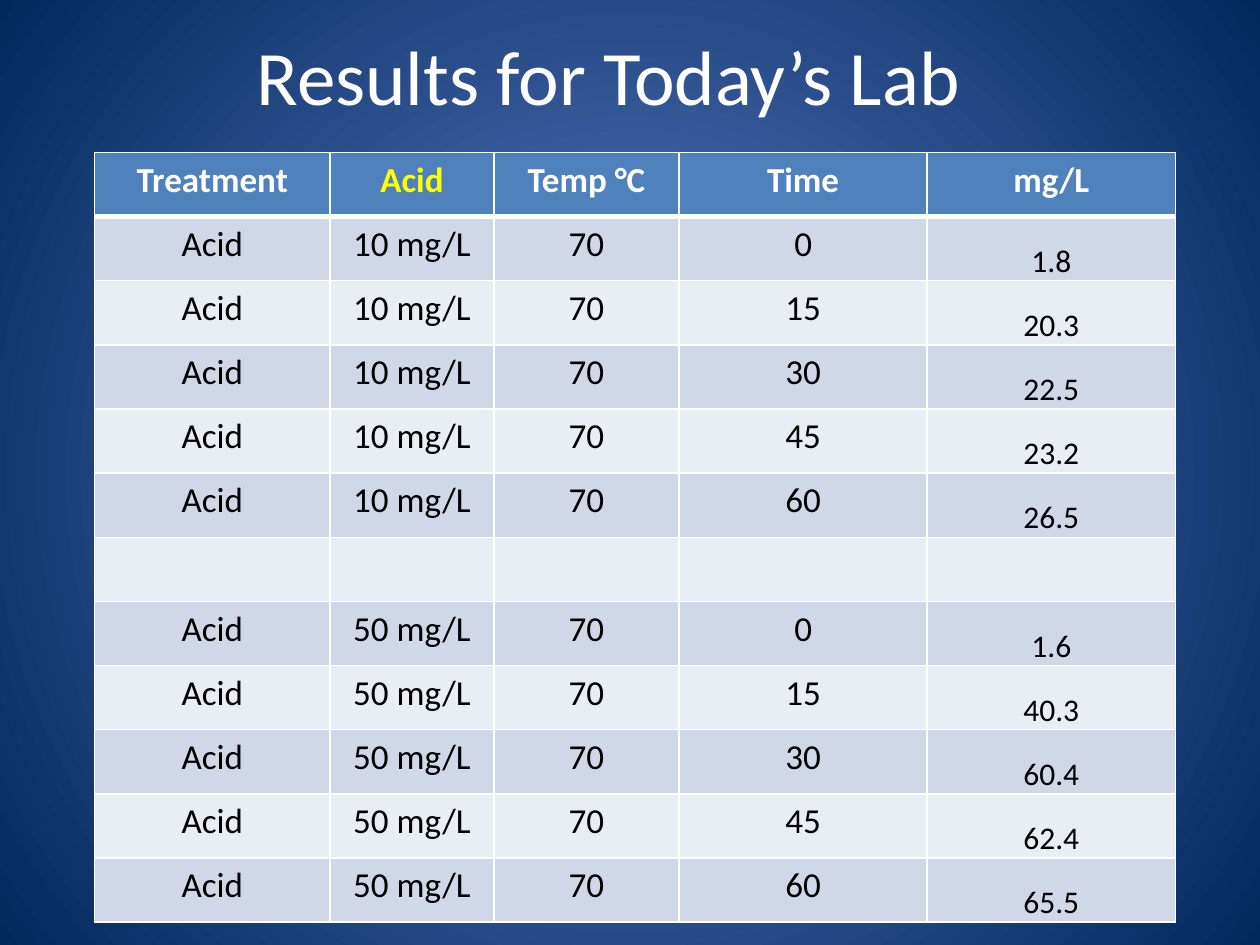
from dataclasses import dataclass

from lxml.etree import SubElement
from pptx import Presentation
from pptx.dml.color import RGBColor
from pptx.enum.text import MSO_ANCHOR, PP_ALIGN
from pptx.oxml.ns import qn
from pptx.util import Inches, Pt


@dataclass(frozen=True)
class Theme:
    font: str = "Calibri"
    white: str = "FFFFFF"
    black: str = "000000"
    accent: str = "FFFF00"
    head: str = "4F81BD"
    bands: tuple = ("D0D8E8", "E9EDF4")
    glow: tuple = ("5E7CC5", "00295C")
    title: int = 44
    body: int = 20
    value: int = 18
    thin: int = 1
    thick: int = 3


THEME = Theme()
HEADS = ("Treatment", "Acid", "Temp °C", "Time", "mg/L")
TIMES = (0, 15, 30, 45, 60)
RESULTS = {
    "10 mg/L": (1.8, 20.3, 22.5, 23.2, 26.5),
    "50 mg/L": (1.6, 40.3, 60.4, 62.4, 65.5),
}
COLS = (1.87, 1.3, 1.47, 1.97, 1.97)
VALUE_CELL = {
    "vertical_anchor": MSO_ANCHOR.BOTTOM,
    "margin_left": Inches(0.01),
    "margin_right": Inches(0.01),
    "margin_top": Inches(0.01),
    "margin_bottom": 0,
}


def apply(item, values):
    for name, value in values.items():
        setattr(item, name, value)


def write(frame, text, size, color, bold=False):
    line = frame.paragraphs[0]
    line.alignment = PP_ALIGN.CENTER
    run = line.add_run()
    run.text = text
    apply(run.font, {"name": THEME.font, "size": Pt(size), "bold": bold})
    run.font.color.rgb = RGBColor.from_string(color)


def paint(slide):
    """Fill the background with a gradient that spreads from the centre."""
    fill = slide.background.fill
    fill.gradient()
    for stop, color in zip(fill.gradient_stops, THEME.glow):
        stop.color.rgb = RGBColor.from_string(color)
    grad = next(slide.element.iter(qn("a:gradFill")))
    grad.remove(grad.find(qn("a:lin")))
    focus = SubElement(grad, qn("a:path"), {"path": "circle"})
    SubElement(focus, qn("a:fillToRect"), dict.fromkeys("ltrb", "50000"))


def add_title(slide, box, text):
    frame = slide.shapes.add_textbox(*map(Inches, box)).text_frame
    apply(frame, {"word_wrap": True, "vertical_anchor": MSO_ANCHOR.MIDDLE})
    write(frame, text, THEME.title, THEME.white)


def add_border(cell, widths):
    props = cell._tc.get_or_add_tcPr()
    for place, (side, width) in enumerate(widths.items()):
        line = SubElement(props, qn(f"a:ln{side}"), {"w": str(Pt(width))})
        fill = SubElement(line, qn("a:solidFill"))
        SubElement(fill, qn("a:srgbClr"), {"val": THEME.white})
        props.insert(place, line)


def lab_rows():
    """Return the heading and both acid groups, split by an empty row."""
    rows = [HEADS]
    for dose, values in RESULTS.items():
        if len(rows) > 1:
            rows.append(("",) * len(HEADS))
        rows += [("Acid", dose, "70", str(time), str(value))
                 for time, value in zip(TIMES, values)]
    return rows


def fill_cell(cell, row, col, text):
    head = row == 0
    fill = THEME.head if head else THEME.bands[(row - 1) % 2]
    cell.fill.solid()
    cell.fill.fore_color.rgb = RGBColor.from_string(fill)
    widths = dict.fromkeys("LRTB", THEME.thin)
    if row < 2:
        widths["B" if head else "T"] = THEME.thick
    add_border(cell, widths)
    if not text:
        return
    size, color = THEME.body, THEME.black
    if head:
        color = THEME.accent if text == "Acid" else THEME.white
    elif col == len(HEADS) - 1:
        size = THEME.value
        apply(cell, VALUE_CELL)
    write(cell.text_frame, text, size, color, head)


def add_results(slide, box, rows):
    table = slide.shapes.add_table(
        len(rows), len(COLS), *map(Inches, box)).table
    for col, width in zip(table.columns, COLS):
        col.width = Inches(width)
    for r, row in enumerate(rows):
        for c, text in enumerate(row):
            fill_cell(table.cell(r, c), r, c, text)


def main():
    deck = Presentation()
    apply(deck, {"slide_width": Inches(10), "slide_height": Inches(7.5)})
    slide = deck.slides.add_slide(deck.slide_layouts[6])
    paint(slide)
    add_title(slide, (0.33, -0.03, 9, 1.25), "Results for Today’s Lab")
    add_results(slide, (0.75, 1.21, sum(COLS), 6.11), lab_rows())
    deck.save("out.pptx")


if __name__ == "__main__":
    main()
